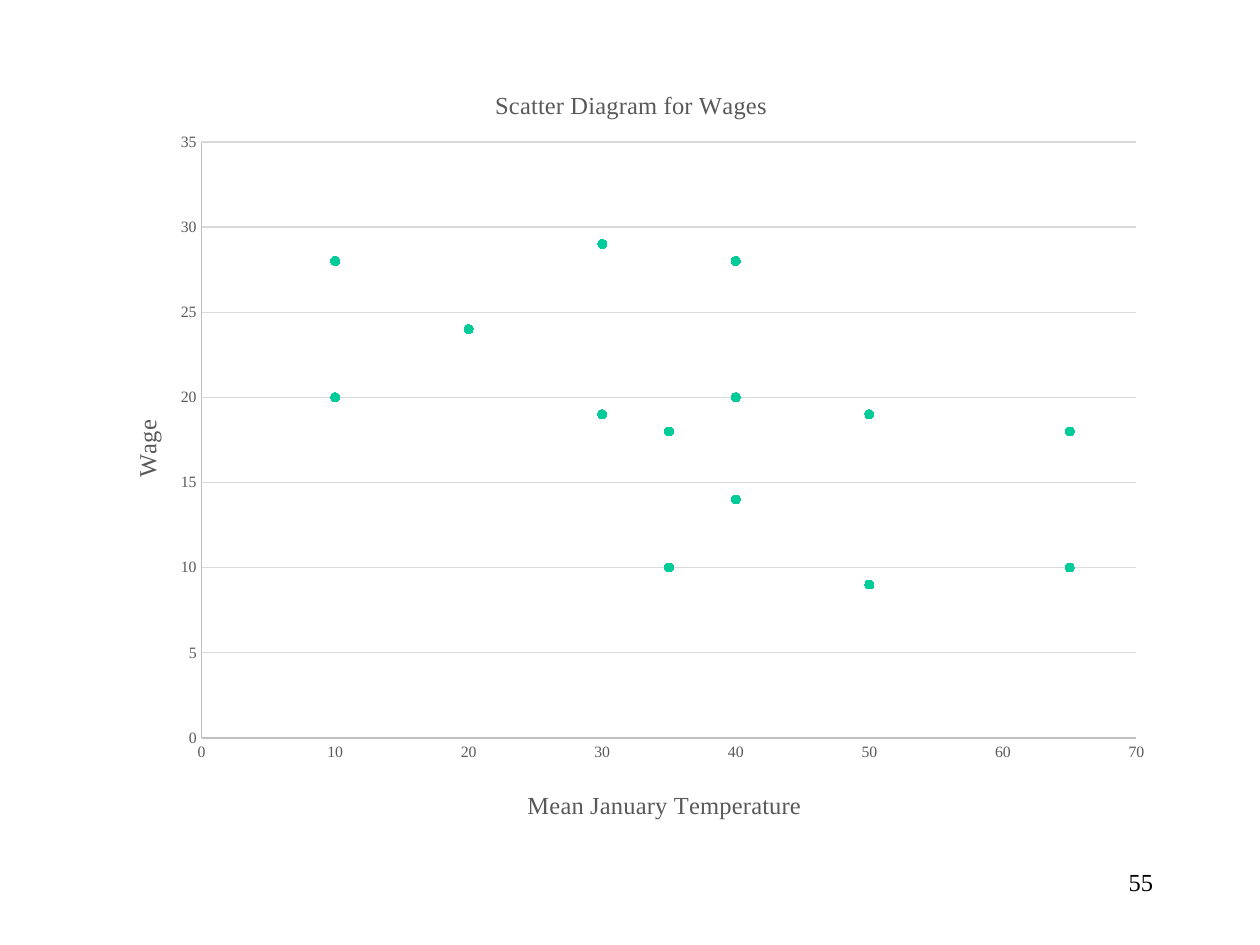
import pptx
import pptx.chart.data
import pptx.dml.color
import pptx.enum.chart
import pptx.enum.text
import pptx.oxml
import pptx.oxml.ns
import pptx.util
from pptx.util import Inches, Pt

TITLE = "Scatter Diagram for Wages"
NUMBER = "55"
POINTS = [
    (35, 18), (35, 10), (40, 14), (50, 19), (50, 9), (65, 18), (65, 10),
    (10, 28), (10, 20), (20, 24), (30, 29), (30, 19), (40, 28), (40, 20),
]
# Axis title, its place as a share of the chart, end of scale, step
AXES = {
    "x": ("Mean January Temperature", (0.40, 0.93), 70, 10),
    "y": ("Wage", (0.03, 0.46), 35, 5),
}
TITLE_AT = (0.37, 0.04)
PLOT_AT = (0.1, 0.113, 0.873, 0.757)
CHART_BOX = (0.75, 0.42, 8.5, 6.25)
NUMBER_BOX = (7.17, 6.83, 2.08, 0.5)

THEME = {
    "font": "Times New Roman",
    "text": "595959", "ink": "000000", "dot": "00CC99",
    "axis": "BFBFBF", "grid": "D9D9D9",
    "head": 14, "tick": 9, "base": 10, "line": 0.75, "mark": 5,
}


def color(key):
    return pptx.dml.color.RGBColor.from_string(THEME[key])


def style(font, size, tint="text"):
    font.name = THEME["font"]
    font.size = Pt(THEME[size])
    font.bold = False
    font.color.rgb = color(tint)


def rule(line, tint):
    line.color.rgb = color(tint)
    line.width = Pt(THEME["line"])


def place(node, spot):
    """Give a chart part a fixed place, as shares of the chart."""
    qn = pptx.oxml.ns.qn
    for old in node.findall(qn("c:layout")):
        node.remove(old)
    inner = '<c:layoutTarget val="inner"/>' if len(spot) == 4 else ""
    modes = "".join(f'<c:{k}Mode val="edge"/>' for k in "xy")
    sizes = "".join(f'<c:{k} val="{v}"/>' for k, v in zip("xywh", spot))
    part = pptx.oxml.parse_xml(
        f'<c:layout {pptx.oxml.ns.nsdecls("c")}><c:manualLayout>'
        f"{inner}{modes}{sizes}</c:manualLayout></c:layout>")
    text = node.find(qn("c:tx"))
    node.insert(0 if text is None else node.index(text) + 1, part)


def label(owner, text, spot):
    """Write the title of a chart or an axis."""
    frame = owner.text_frame
    frame.text = text
    style(frame.paragraphs[0].font, "head")
    place(owner._element, spot)


def set_axis(axis, text, spot, end, step):
    label(axis.axis_title, text, spot)
    axis.minimum_scale, axis.maximum_scale = 0, end
    axis.major_unit = step
    none = pptx.enum.chart.XL_TICK_MARK.NONE
    axis.major_tick_mark = axis.minor_tick_mark = none
    style(axis.tick_labels.font, "tick")
    rule(axis.format.line, "axis")


def add_plot(slide):
    data = pptx.chart.data.XyChartData()
    wages = data.add_series("Series 1")
    for x, y in POINTS:
        wages.add_data_point(x, y)
    kind = pptx.enum.chart.XL_CHART_TYPE.XY_SCATTER
    chart = slide.shapes.add_chart(kind, *map(Inches, CHART_BOX), data).chart
    style(chart.font, "base", "ink")
    chart.has_legend = False
    label(chart.chart_title, TITLE, TITLE_AT)
    chart.chart_title.include_in_layout = False
    set_axis(chart.category_axis, *AXES["x"])
    set_axis(chart.value_axis, *AXES["y"])
    chart.category_axis.has_major_gridlines = False
    rule(chart.value_axis.major_gridlines.format.line, "grid")
    plot = chart.plots[0]
    plot.vary_by_categories = False
    place(plot._element.getparent(), PLOT_AT)

    dots = plot.series[0]
    dots.format.line.fill.background()
    dots.marker.style = pptx.enum.chart.XL_MARKER_STYLE.CIRCLE
    dots.marker.size = THEME["mark"]
    look = dots.marker.format
    look.fill.solid()
    look.fill.fore_color.rgb = color("dot")
    rule(look.line, "dot")


def add_number(slide):
    frame = slide.shapes.add_textbox(*map(Inches, NUMBER_BOX)).text_frame
    frame.word_wrap = True
    frame.text = NUMBER
    para = frame.paragraphs[0]
    para.alignment = pptx.enum.text.PP_ALIGN.RIGHT
    style(para.font, "head", "ink")


def main():
    deck = pptx.Presentation()
    deck.slide_width, deck.slide_height = Inches(10), Inches(7.5)
    slide = deck.slides.add_slide(deck.slide_layouts[6])
    add_number(slide)
    add_plot(slide)
    deck.save("out.pptx")


if __name__ == "__main__":
    main()
